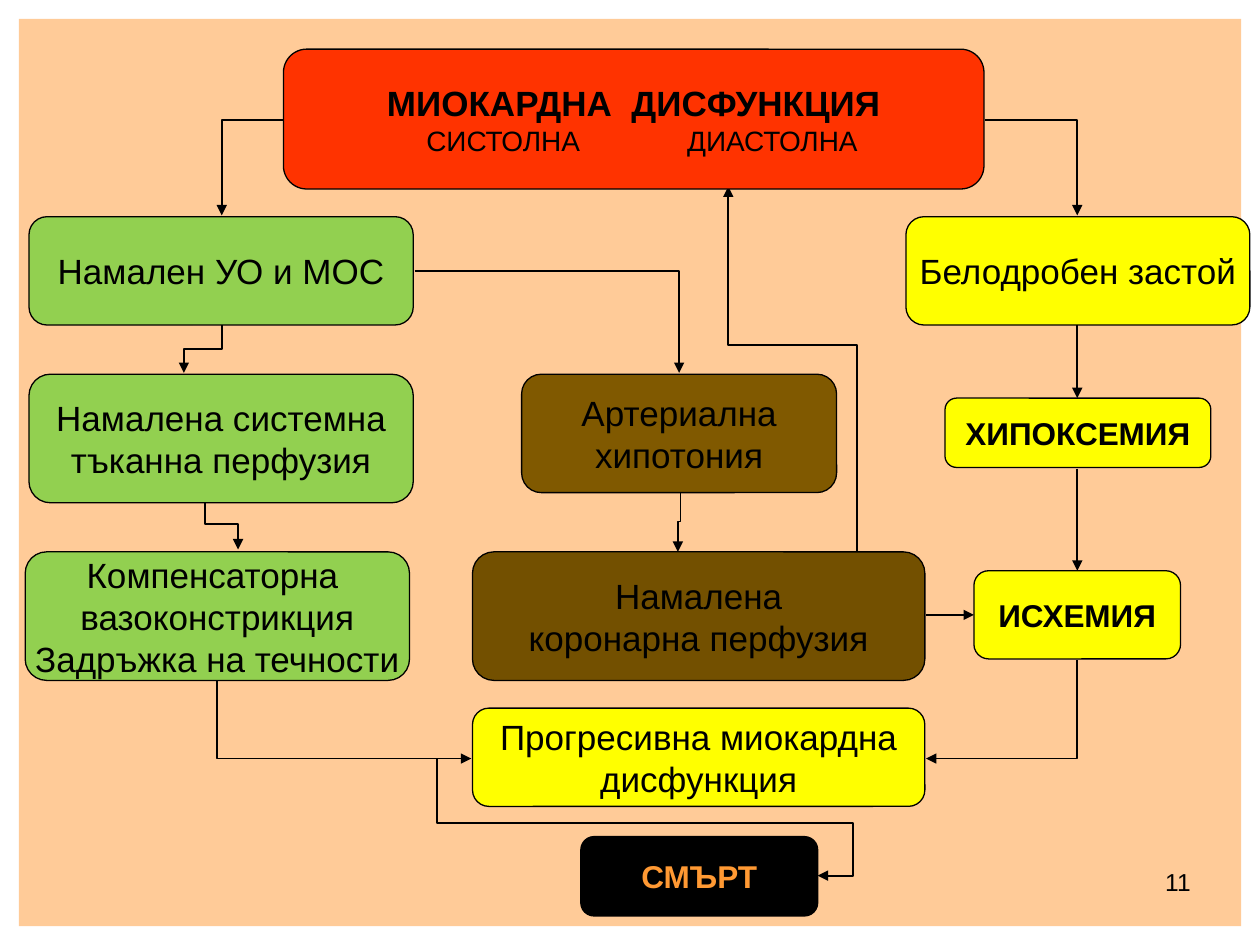
from pptx import Presentation
from pptx.dml.color import RGBColor
from pptx.enum.shapes import MSO_CONNECTOR, MSO_SHAPE
from pptx.enum.text import MSO_ANCHOR, PP_ALIGN
from pptx.oxml.ns import qn
from pptx.util import Inches, Pt
from lxml import etree

RECT, ROUND = MSO_SHAPE.RECTANGLE, MSO_SHAPE.ROUNDED_RECTANGLE
STRAIGHT = MSO_CONNECTOR.STRAIGHT
CENTER, LEFT, RIGHT = PP_ALIGN.CENTER, PP_ALIGN.LEFT, PP_ALIGN.RIGHT
MIDDLE, TOP = MSO_ANCHOR.MIDDLE, MSO_ANCHOR.TOP
HEX = {"back": "FF9933", "red": "FF3300", "green": "92D050", "yellow": "FFFF00",
       "brown": "805900", "dark": "735000", "black": "000000", "orange": "FF9933"}
RGB = {name: RGBColor.from_string(code) for name, code in HEX.items()}


def write(frame, text, size=20, bold=False, color="black", align=CENTER,
          anchor=MIDDLE, inset=0, wrap=False):
    """Fill a text frame, one paragraph for each line."""
    frame.word_wrap = wrap
    frame.vertical_anchor = anchor
    frame.margin_left = frame.margin_right = Inches(inset)
    frame.margin_top = frame.margin_bottom = Inches(inset)
    for i, line in enumerate(text.split("\n")):
        para = frame.paragraphs[0] if i == 0 else frame.add_paragraph()
        para.alignment = align
        run = para.add_run()
        run.text = line
        font = run.font
        font.name, font.size, font.bold = "Arial", Pt(size), bold
        font.color.rgb = RGB[color]


def arrow(points):
    """Draw a straight or bent line with a head at its last point."""
    points = [(Inches(x), Inches(y)) for x, y in points]
    if len(points) == 2:
        line = shapes.add_connector(STRAIGHT, *points[0], *points[1])
    else:
        path = shapes.build_freeform(*points[0])
        path.add_line_segments(points[1:], close=False)
        line = path.convert_to_shape()
        line.fill.background()
    line.line.color.rgb = RGB["black"]
    line.line.width = Pt(1)
    props = line._element.spPr
    etree.SubElement(props.find(qn("a:ln")), qn("a:tailEnd"), type="triangle")
    etree.SubElement(props, qn("a:effectLst"))


prs = Presentation()
prs.slide_width, prs.slide_height = Inches(10), Inches(7.5)
slide = prs.slides.add_slide(prs.slide_layouts[6])
shapes = slide.shapes

panel = shapes.add_shape(RECT, Inches(0.15), Inches(0.15), Inches(9.7), Inches(7.2))
panel.shadow.inherit = False
panel.fill.solid()
panel.fill.fore_color.rgb = RGB["back"]
panel.line.fill.background()
tint = panel._element.spPr.find(qn("a:solidFill"))[0]
etree.SubElement(tint, qn("a:alpha"), val="50000")

arrows = [
    [(6.8, 4.69), (6.8, 2.74), (5.78, 2.74), (5.78, 1.48)],
    [(2.25, 0.95), (1.76, 0.95), (1.76, 1.71)],
    [(7.82, 0.95), (8.55, 0.95), (8.55, 1.71)],
    [(3.29, 2.15), (5.39, 2.15), (5.39, 2.96)],
    [(1.76, 2.58), (1.76, 2.77), (1.46, 2.77), (1.46, 2.96)],
    [(1.63, 3.97), (1.63, 4.16), (1.89, 4.16), (1.89, 4.36)],
    [(1.72, 5.4), (1.72, 6.02), (3.74, 6.02)],
    [(3.74, 6.02), (3.47, 6.02), (3.47, 6.53), (6.77, 6.53), (6.77, 6.95), (6.49, 6.95)],
    [(5.4, 3.91), (5.4, 4.14), (5.38, 4.14), (5.38, 4.38)],
    [(7.35, 4.88), (7.73, 4.88)],
    [(8.55, 2.58), (8.55, 3.16)],
    [(8.55, 3.72), (8.55, 4.53)],
    [(8.55, 5.24), (8.55, 6.02), (7.35, 6.02)],
]
for points in arrows:
    arrow(points)

strong = {"size": 18, "bold": True}
boxes = [
    (2.25, 0.39, 5.56, 1.11, "red", "МИОКАРДНА  ДИСФУНКЦИЯ\n\tСИСТОЛНА\tДИАСТОЛНА",
     {"bold": True, "wrap": True}),
    (0.23, 1.72, 3.05, 0.86, "green", "Намален УО и МОС", {}),
    (7.19, 1.72, 2.73, 0.86, "yellow", "Белодробен застой", {}),
    (0.23, 2.97, 3.05, 1.02, "green", "Намалена системна\nтъканна перфузия", {}),
    (0.2, 4.38, 3.05, 1.02, "green",
     "Компенсаторна \nвазоконстрикция\nЗадръжка на течности", {}),
    (3.75, 5.62, 3.59, 0.78, "yellow", "Прогресивна миокардна\nдисфункция", {}),
    (4.61, 6.64, 1.88, 0.63, "black", "СМЪРТ", {**strong, "color": "orange"}),
    (4.14, 2.97, 2.5, 0.94, "brown", "Артериална\nхипотония", {}),
    (7.5, 3.16, 2.11, 0.55, "yellow", "ХИПОКСЕМИЯ", strong),
    (7.73, 4.53, 1.64, 0.7, "yellow", "ИСХЕМИЯ", strong),
    (3.75, 4.38, 3.59, 1.02, "dark", "Намалена\nкоронарна перфузия", {}),
]
cards = []
for x, y, w, h, fill, text, style in boxes:
    card = shapes.add_shape(ROUND, Inches(x), Inches(y), Inches(w), Inches(h))
    card.shadow.inherit = False
    card.fill.solid()
    card.fill.fore_color.rgb = RGB[fill]
    card.line.color.rgb = RGB["black"]
    card.line.width = Pt(0.75)
    write(card.text_frame, text, **style)
    cards.append(card)

# The two kinds of dysfunction stand at tab stops under the heading
kinds = cards[0].text_frame.paragraphs[1]
kinds.alignment = LEFT
kinds.runs[0].font.size, kinds.runs[0].font.bold = Pt(16), False
tabs = etree.SubElement(kinds._p.get_or_add_pPr(), qn("a:tabLst"))
for stop in (1.08, 3.15):
    etree.SubElement(tabs, qn("a:tab"), pos=str(Inches(stop)), algn="l")

number = shapes.add_textbox(Inches(9.18), Inches(6.83), Inches(0.32), Inches(0.32))
write(number.text_frame, "11", size=14, align=RIGHT, anchor=TOP, inset=0.05)

prs.save("out.pptx")
